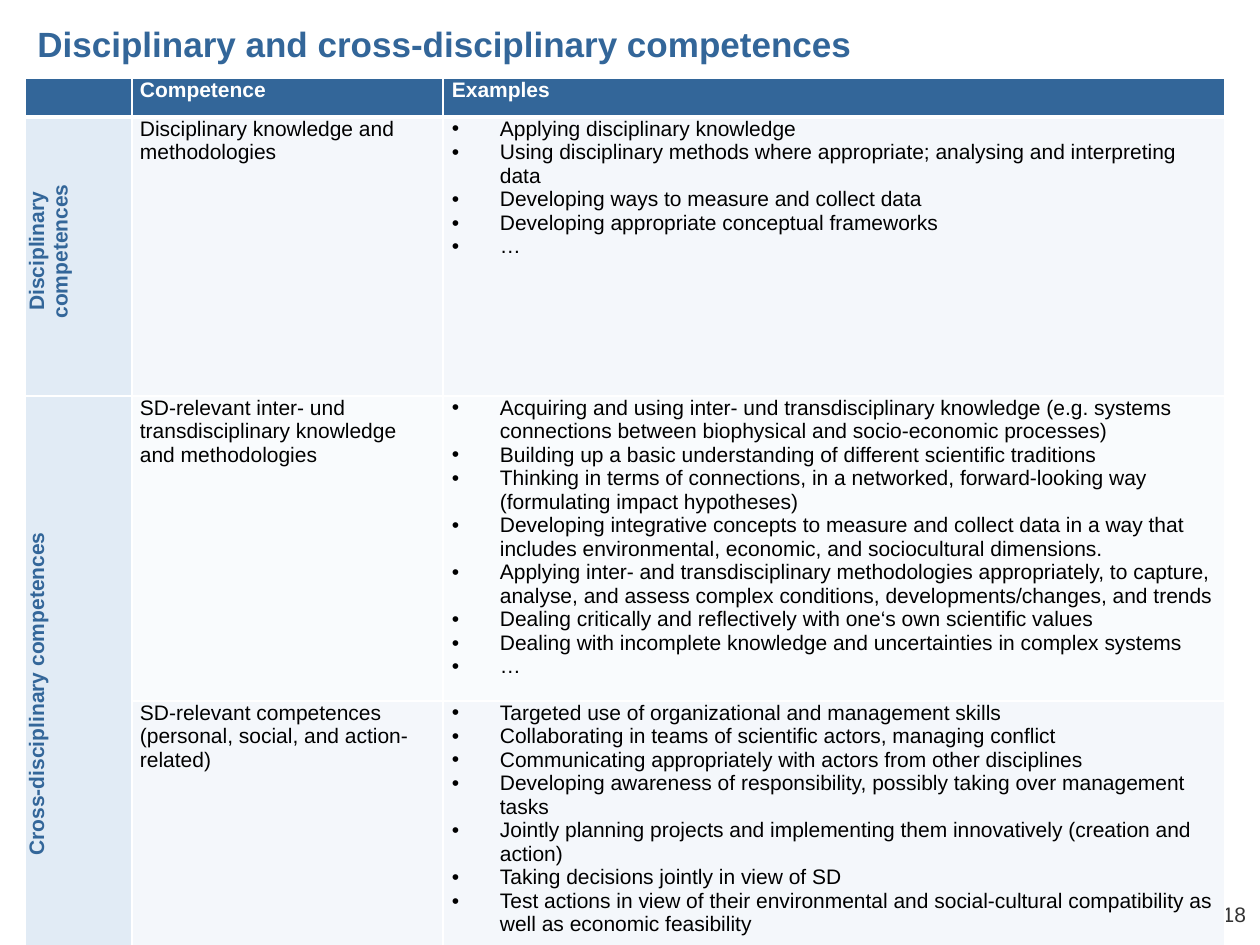
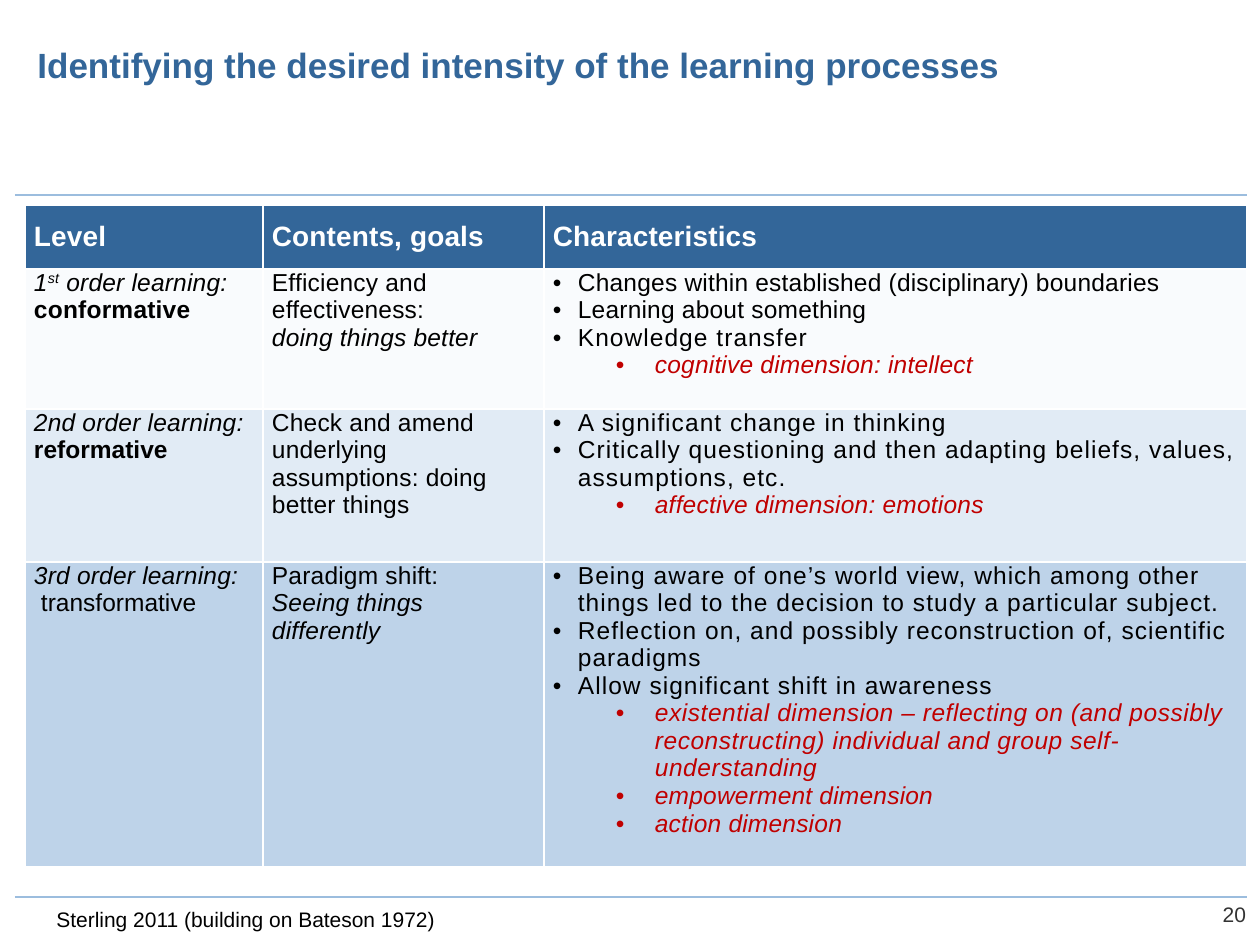
"""Build two slides with tables on competences and on levels of learning."""
import dataclasses

import lxml.etree
import pptx
import pptx.dml.color
import pptx.enum.shapes
import pptx.enum.text
import pptx.oxml.ns
import pptx.util

PX = 914400 / 126
qn = pptx.oxml.ns.qn
ALIGN = pptx.enum.text.PP_ALIGN
ANCHOR = pptx.enum.text.MSO_ANCHOR


@dataclasses.dataclass(frozen=True)
class Theme:
    font: str = "Arial"
    brand: str = "336699"
    rule: str = "9CBDDE"
    white: str = "FFFFFF"
    black: str = "000000"
    grey: str = "333333"
    accent: str = "C00000"
    palest: str = "F9FBFD"
    pale: str = "F4F7FB"
    light: str = "E1EBF5"
    mid: str = "BED3E9"
    title: int = 20
    head: int = 16
    body: int = 14
    small: int = 12


T = Theme()


def px(n):
    return pptx.util.Emu(round(n * PX))


def write(tf, lines, size, color=T.black, bold=False, align=None):
    """Fill a text frame with lines of (look, part, part...)."""
    for n, (look, *parts) in enumerate(lines):
        p = tf.paragraphs[0] if n == 0 else tf.add_paragraph()
        p.alignment = align
        pPr = p._p.get_or_add_pPr()
        left, hang = look.get("indent", (0, 0))
        if left:
            pPr.set("marL", str(px(left)))
            pPr.set("indent", str(px(-hang)))
        if hang:
            lxml.etree.SubElement(pPr, qn("a:buFont")).set("typeface", T.font)
            lxml.etree.SubElement(pPr, qn("a:buChar")).set("char", "•")
        for k, part in enumerate(parts):
            r = p.add_run()
            r.text = part
            r.font.name = T.font
            r.font.size = pptx.util.Pt(size)
            r.font.bold = look.get("bold", bold)
            r.font.italic = look.get("italic", False)
            r.font.color.rgb = pptx.dml.color.RGBColor.from_string(look.get("color", color))
            if "spc" in look:
                r.font._element.set("spc", str(look["spc"]))
            if k == 1:
                r.font._element.set("baseline", "30000")


PLAIN = {}
SIDE = {"indent": (10, 0), "bold": True, "color": T.brand}
ITEM = {"indent": (48, 48)}
HEAD = {"spc": 10}
LEVEL = {"italic": True, "spc": 10}
STRONG = {"bold": True, "spc": 10}
REFORM = {"bold": True}
SHIFT = {"indent": (7, 0)}
GOAL = {"spc": 10}
POINT = {"indent": (25, 25), "spc": 10}
WIDE = {"indent": (25, 25), "spc": 60}
DIMENSION = {"indent": (102, 39), "italic": True, "color": T.accent, "spc": 10}
LOOSE = DIMENSION | {"spc": 30}

competences = [
    [[], [(PLAIN, "Competence")], [(PLAIN, "Examples")]],
    [
        [(SIDE, "Disciplinary competences")],
        [(PLAIN, "Disciplinary knowledge and methodologies")],
        [(ITEM, text) for text in (
            "Applying disciplinary knowledge",
            "Using disciplinary methods where appropriate; analysing and interpreting data",
            "Developing ways to measure and collect data",
            "Developing appropriate conceptual frameworks",
            "…",
        )],
    ],
    [
        [(SIDE, "Cross-disciplinary competences")],
        [(PLAIN, "SD-relevant inter- und transdisciplinary knowledge and methodologies")],
        [(ITEM, text) for text in (
            "Acquiring and using inter- und transdisciplinary knowledge (e.g. systems "
            "connections between biophysical and socio-economic processes)",
            "Building up a basic understanding of different scientific traditions",
            "Thinking in terms of connections, in a networked, forward-looking way "
            "(formulating impact hypotheses)",
            "Developing integrative concepts to measure and collect data in a way that "
            "includes environmental, economic, and sociocultural dimensions.",
            "Applying inter- and transdisciplinary methodologies appropriately, to capture, "
            "analyse, and assess complex conditions, developments/changes, and trends",
            "Dealing critically and reflectively with one‘s own scientific values",
            "Dealing with incomplete knowledge and uncertainties in complex systems",
            "…",
        )],
    ],
    [
        [],
        [(PLAIN, "SD-relevant competences (personal, social, and action-related)")],
        [(ITEM, text) for text in (
            "Targeted use of organizational and management skills",
            "Collaborating in teams of scientific actors, managing conflict",
            "Communicating appropriately with actors from other disciplines",
            "Developing awareness of responsibility, possibly taking over management tasks",
            "Jointly planning projects and implementing them innovatively (creation and action)",
            "Taking decisions jointly in view of SD",
            "Test actions in view of their environmental and social-cultural compatibility "
            "as well as economic feasibility",
        )],
    ],
]

learning = [
    [[(HEAD, "Level")], [(HEAD, "Contents, goals")], [(HEAD, "Characteristics")]],
    [
        [(LEVEL, "1", "st", " order learning:"), (STRONG, "conformative")],
        [(GOAL, "Efficiency and effectiveness:"), (LEVEL, "doing things better")],
        [
            (POINT, "Changes within established (disciplinary) boundaries"),
            (POINT, "Learning about something"),
            (WIDE, "Knowledge transfer"),
            (DIMENSION, "cognitive dimension: intellect"),
        ],
    ],
    [
        [(LEVEL, "2nd order learning:"), (REFORM, "reformative")],
        [(GOAL, "Check and amend underlying assumptions: doing better things")],
        [
            (WIDE, "A significant change in thinking"),
            (WIDE, "Critically questioning and then adapting beliefs, values, assumptions, etc."),
            (DIMENSION, "affective dimension: emotions"),
        ],
    ],
    [
        [(LEVEL, "3rd order learning:"), (SHIFT, "transformative")],
        [(GOAL, "Paradigm shift:"), (LEVEL, "Seeing things differently")],
        [
            (WIDE, "Being aware of one’s world view, which among other things led to the "
                   "decision to study a particular subject."),
            (WIDE, "Reflection on, and possibly reconstruction of, scientific paradigms"),
            (WIDE, "Allow significant shift in awareness"),
            (LOOSE, "existential dimension – reflecting on (and possibly reconstructing) "
                    "individual and group self-understanding"),
            (DIMENSION, "empowerment dimension"),
            (DIMENSION, "action dimension"),
        ],
    ],
]

pages = [
    dict(
        title="Disciplinary and cross-disciplinary competences", title_top=16, number="18",
        rules=[], source=None, top=78, cols=[107, 311, 782], rows=[39, 279, 305, 301],
        cells=competences, fills=[T.brand, T.pale, T.palest, T.pale], side=T.light,
        head=T.small, body=T.small, head_anchor=ANCHOR.TOP, head_line=3, margins=[8, 8, 9],
    ),
    dict(
        title="Identifying the desired intensity of the learning processes", title_top=37,
        number="20", rules=[195, 897], source="Sterling 2011 (building on Bateson 1972)",
        top=205, cols=[238, 281, 703], rows=[64, 140, 153, 305],
        cells=learning, fills=[T.brand, T.palest, T.light, T.mid], side=None,
        head=T.head, body=T.body, head_anchor=ANCHOR.MIDDLE, head_line=1, margins=[9, 9, 9],
    ),
]

prs = pptx.Presentation()
prs.slide_width, prs.slide_height = px(1260), px(945)

for page in pages:
    s = prs.slides.add_slide(prs.slide_layouts[6])

    for y in page["rules"]:
        line = s.shapes.add_connector(
            pptx.enum.shapes.MSO_CONNECTOR.STRAIGHT, px(15), px(y), px(1247), px(y))
        line.line.color.rgb = pptx.dml.color.RGBColor.from_string(T.rule)
        line.line.width = pptx.util.Pt(1.5)
        lxml.etree.SubElement(line._element.spPr, qn("a:effectLst"))

    tf = s.shapes.add_textbox(px(1197), px(902), px(49), px(25)).text_frame
    tf.margin_left = tf.margin_right = tf.margin_top = tf.margin_bottom = 0
    tf.word_wrap = True
    write(tf, [(PLAIN, page["number"])], T.small, T.grey, align=ALIGN.RIGHT)

    tf = s.shapes.add_textbox(px(25), px(page["title_top"]), px(1116), px(49)).text_frame
    tf.word_wrap = True
    write(tf, [(PLAIN, page["title"])], T.title, T.brand, bold=True)

    rows, cols = page["rows"], page["cols"]
    table = s.shapes.add_table(
        len(rows), len(cols), px(25), px(page["top"]), px(sum(cols)), px(sum(rows))).table
    for column, width in zip(table.columns, cols):
        column.width = px(width)
    for row, height in zip(table.rows, rows):
        row.height = px(height)

    for i, texts in enumerate(page["cells"]):
        for j, lines in enumerate(texts):
            cell = table.cell(i, j)
            sideways = bool(page["side"]) and i > 0 and j == 0
            cell.margin_left = cell.margin_right = px(page["margins"][j])
            cell.margin_top = cell.margin_bottom = 0
            cell.vertical_anchor = ANCHOR.MIDDLE if sideways else ANCHOR.TOP
            if i == 0:
                cell.vertical_anchor = page["head_anchor"]
            tcPr = cell._tc.get_or_add_tcPr()
            if sideways:
                tcPr.set("vert", "vert270")
            for edge in ("lnL", "lnR", "lnT", "lnB"):
                thick = (i, edge) in ((0, "lnB"), (1, "lnT"))
                ln = lxml.etree.SubElement(tcPr, qn("a:" + edge))
                ln.set("w", str(pptx.util.Pt(page["head_line"] if thick else 1)))
                solid = lxml.etree.SubElement(ln, qn("a:solidFill"))
                lxml.etree.SubElement(solid, qn("a:srgbClr")).set("val", T.white)
            cell.fill.solid()
            cell.fill.fore_color.rgb = pptx.dml.color.RGBColor.from_string(
                page["side"] if sideways else page["fills"][i])
            write(cell.text_frame, lines, page["body"] if i else page["head"],
                  T.black if i else T.white, bold=i == 0,
                  align=ALIGN.CENTER if sideways else None)

    if page["side"]:
        table.cell(2, 0).merge(table.cell(3, 0))

    if page["source"]:
        tf = s.shapes.add_textbox(px(44), px(900), px(630), px(38)).text_frame
        tf.word_wrap = True
        write(tf, [(PLAIN, page["source"])], T.small)

prs.save("out.pptx")
